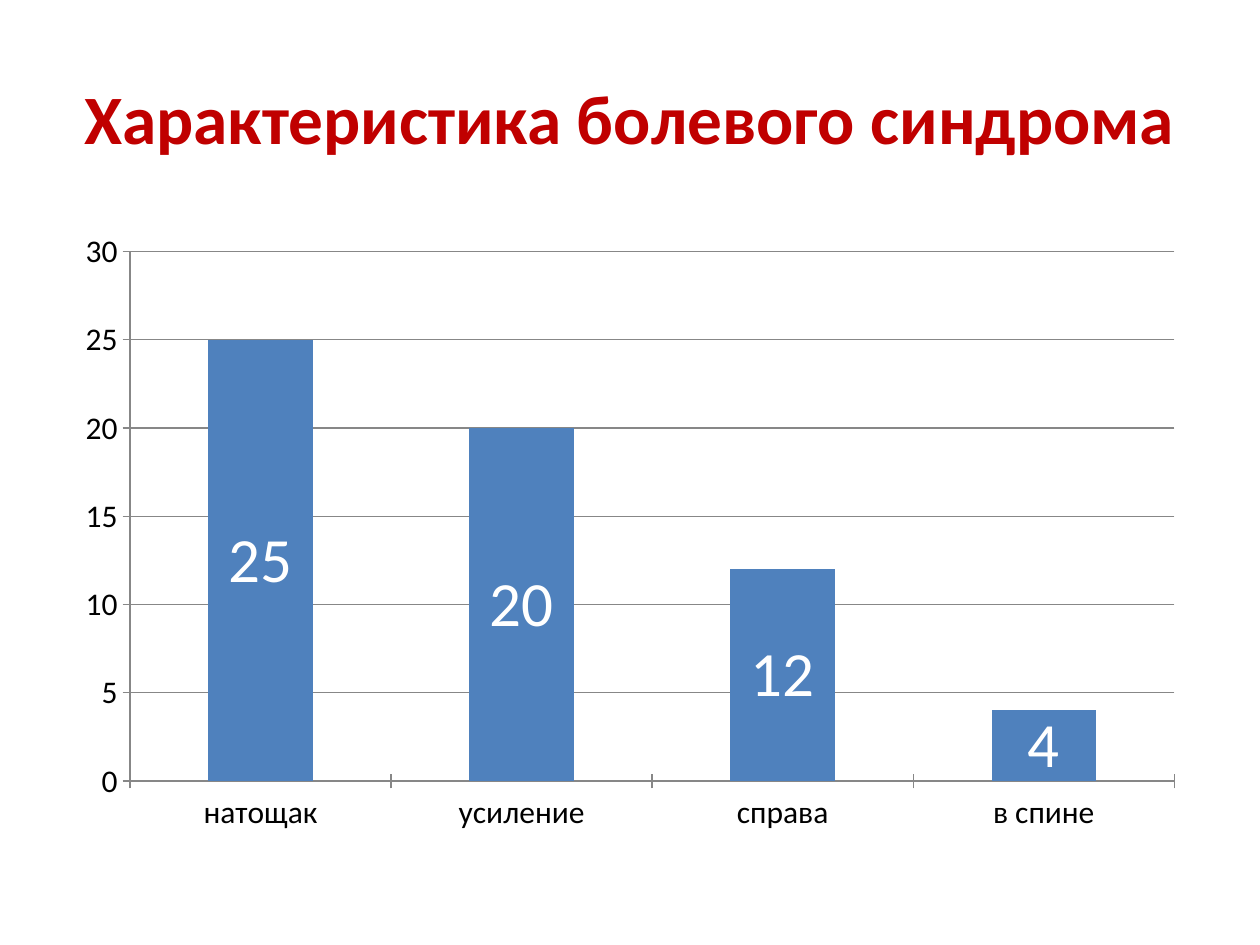
"""Build a slide with a bar chart describing the pain syndrome."""
import dataclasses

import pptx
import pptx.chart.data
import pptx.dml.color
import pptx.enum.chart
import pptx.enum.text
import pptx.util

PX_PER_INCH = 126


@dataclasses.dataclass(frozen=True)
class Theme:
    """Colours, font and type sizes of the slide."""

    font: str = "Calibri"
    heading: str = "C00000"
    text: str = "000000"
    bar: str = "4F81BD"
    value: str = "FFFFFF"
    grid: str = "878787"
    heading_size: float = 39.6
    axis_size: float = 18
    value_size: float = 36


THEME = Theme()
COMPLAINTS = {"натощак": 25, "усиление": 20, "справа": 12, "в спине": 4}


def px(length):
    """Convert pixels to EMU."""
    return pptx.util.Emu(round(length * 914400 / PX_PER_INCH))


def apply(target, values):
    """Set each named attribute on the target."""
    for name, value in values.items():
        setattr(target, name, value)


def style_font(font, size, colour, bold=False):
    """Give a font the theme face with a size, colour and weight."""
    apply(font, {"name": THEME.font, "size": pptx.util.Pt(size), "bold": bold})
    font.color.rgb = pptx.dml.color.RGBColor.from_string(colour)


def add_heading(slide, text, box):
    """Add the centred slide heading."""
    frame = slide.shapes.add_textbox(*map(px, box)).text_frame
    apply(frame, {"word_wrap": True,
                  "vertical_anchor": pptx.enum.text.MSO_ANCHOR.MIDDLE})
    paragraph = frame.paragraphs[0]
    paragraph.alignment = pptx.enum.text.PP_ALIGN.CENTER
    run = paragraph.add_run()
    run.text = text
    style_font(run.font, THEME.heading_size, THEME.heading, bold=True)


def style_axis(axis, has_gridlines):
    """Set the ticks, line and gridlines of an axis."""
    apply(axis, {"has_major_gridlines": has_gridlines,
                 "major_tick_mark": pptx.enum.chart.XL_TICK_MARK.CROSS})
    lines = [axis.format.line]
    if has_gridlines:
        lines.append(axis.major_gridlines.format.line)
    for line in lines:
        line.color.rgb = pptx.dml.color.RGBColor.from_string(THEME.grid)
        line.width = pptx.util.Pt(0.75)


def add_bar_chart(slide, values, box):
    """Add the stacked column chart with its value labels."""
    data = pptx.chart.data.CategoryChartData()
    data.categories = list(values)
    data.add_series("Series 1", list(values.values()))
    chart = slide.shapes.add_chart(
        pptx.enum.chart.XL_CHART_TYPE.COLUMN_STACKED, *map(px, box), data).chart
    apply(chart, {"has_legend": False, "has_title": False})
    style_font(chart.font, THEME.axis_size, THEME.text)
    style_axis(chart.category_axis, has_gridlines=False)
    style_axis(chart.value_axis, has_gridlines=True)
    apply(chart.value_axis,
          {"minimum_scale": 0, "maximum_scale": 30, "major_unit": 5})

    plot = chart.plots[0]
    apply(plot, {"gap_width": 150, "overlap": 100, "vary_by_categories": False})
    series = plot.series[0]
    series.format.fill.solid()
    series.format.fill.fore_color.rgb = pptx.dml.color.RGBColor.from_string(THEME.bar)
    labels = series.data_labels
    apply(labels, {"show_value": True,
                   "position": pptx.enum.chart.XL_LABEL_POSITION.CENTER})
    style_font(labels.font, THEME.value_size, THEME.value)


def main():
    """Build and save the slide."""
    deck = pptx.Presentation()
    apply(deck, {"slide_width": px(1260), "slide_height": px(945)})
    slide = deck.slides.add_slide(deck.slide_layouts[6])
    add_heading(slide, "Характеристика болевого синдрома", (63, 38, 1134, 158))
    add_bar_chart(slide, COMPLAINTS, (63, 220, 1134, 624))
    deck.save("out.pptx")


if __name__ == "__main__":
    main()
